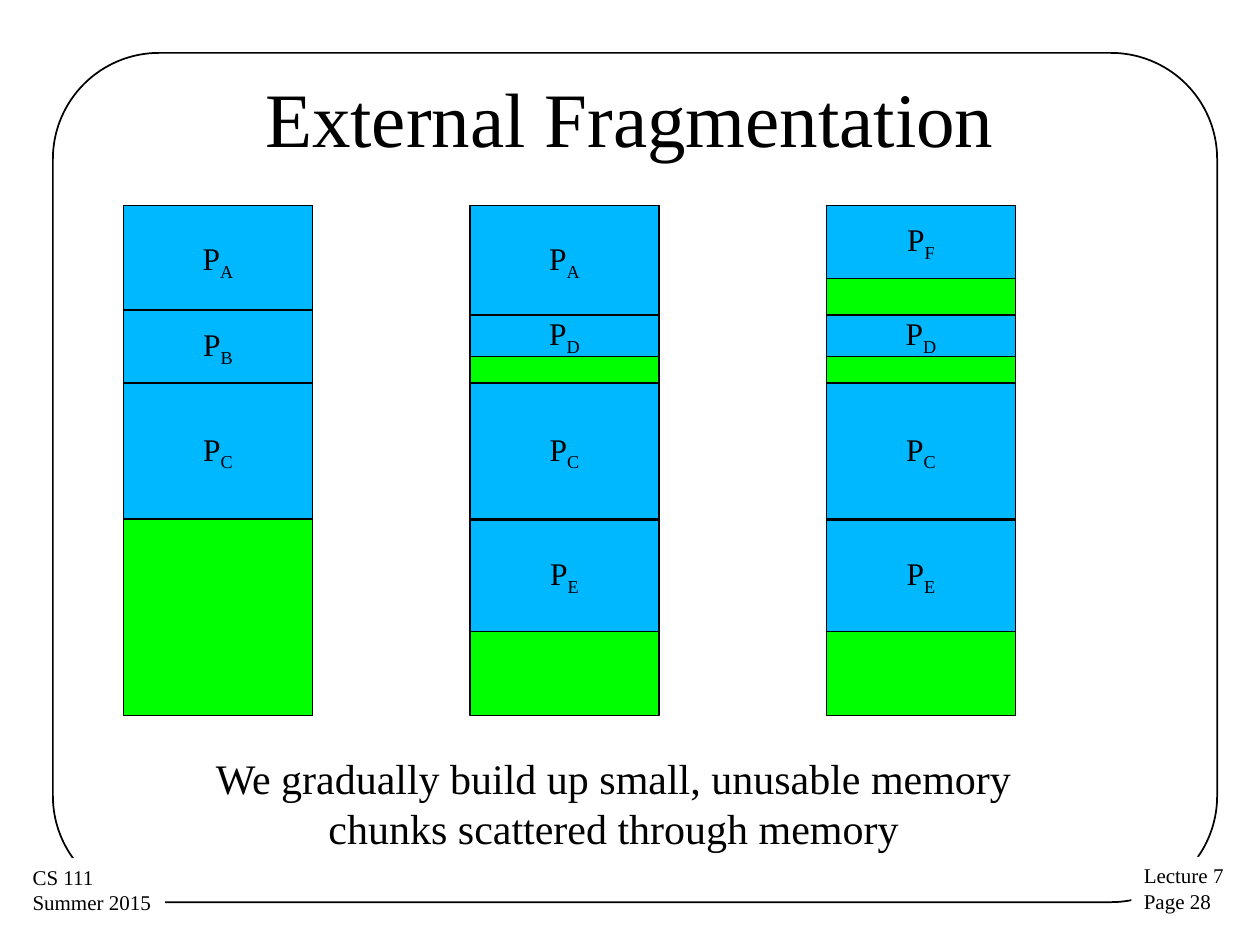
from pptx import Presentation
from pptx.dml.color import RGBColor
from pptx.enum.shapes import MSO_SHAPE
from pptx.enum.text import MSO_ANCHOR, PP_ALIGN
from pptx.util import Inches, Pt

FONT = "Times New Roman"
COLORS = {"ink": "000000", "paper": "FFFFFF", "free": "00FF00", "used": "00B8FF"}

TITLE = "External Fragmentation"
CAPTION = "We gradually build up small, unusable memory chunks scattered through memory"
CORNER_LABELS = [
    (["Lecture 7", "Page 28"], (8.98, 6.8, 0.84, 0.51)),
    (["CS 111", "Summer 2015"], (0.16, 6.81, 1.15, 0.51)),
]

MEMORY_TOP, MEMORY_WIDTH, MEMORY_HEIGHT = 1.63, 1.5, 4.05
# Process: (top, height)
PROCESSES = {
    "A": (1.63, 0.88),
    "B": (2.46, 0.58),
    "C": (3.04, 1.08),
    "D": (2.5, 0.33),
    "E": (4.13, 0.88),
    "F": (1.63, 0.58),
}
# Left edge of each memory snapshot and the processes loaded in it
SNAPSHOTS = [(0.98, "ABC"), (3.73, "ACDE"), (6.56, "CDEF")]


def color(name):
    return RGBColor.from_string(COLORS[name])


def add_box(slide, box, fill=None, line_width=None, kind=MSO_SHAPE.RECTANGLE):
    shape = slide.shapes.add_shape(kind, *map(Inches, box))
    shape.shadow.inherit = False
    if fill:
        shape.fill.solid()
        shape.fill.fore_color.rgb = color(fill)
    else:
        shape.fill.background()
    if line_width:
        shape.line.color.rgb = color("ink")
        shape.line.width = Pt(line_width)
    else:
        shape.line.fill.background()
    return shape


def add_run(paragraph, text, size, subscript=False):
    run = paragraph.add_run()
    run.text = text
    run.font.name = FONT
    run.font.size = Pt(size)
    run.font.color.rgb = color("ink")
    if subscript:
        run._r.get_or_add_rPr().set("baseline", "-25000")


def write_lines(shape, lines, size, align, anchor=MSO_ANCHOR.TOP, wrap=True):
    frame = shape.text_frame
    frame.word_wrap = wrap
    frame.vertical_anchor = anchor
    for index, line in enumerate(lines):
        paragraph = frame.add_paragraph() if index else frame.paragraphs[0]
        paragraph.alignment = align
        add_run(paragraph, line, size)


def add_snapshot(slide, left, names):
    add_box(slide, (left, MEMORY_TOP, MEMORY_WIDTH, MEMORY_HEIGHT), "free", 0.75)
    for name in names:
        top, height = PROCESSES[name]
        block = add_box(slide, (left, top, MEMORY_WIDTH, height), "used", 0.75)
        write_lines(block, ["P"], 18, PP_ALIGN.CENTER, MSO_ANCHOR.MIDDLE, wrap=False)
        add_run(block.text_frame.paragraphs[0], name, 18, subscript=True)


def main():
    presentation = Presentation()
    presentation.slide_width = Inches(10)
    presentation.slide_height = Inches(7.5)
    slide = presentation.slides.add_slide(presentation.slide_layouts[6])

    frame = add_box(slide, (0.42, 0.42, 9.24, 6.74), line_width=1,
                    kind=MSO_SHAPE.ROUNDED_RECTANGLE)
    frame.adjustments[0] = 0.125
    for lines, box in CORNER_LABELS:
        label = add_box(slide, box, "paper")
        write_lines(label, lines, 12, PP_ALIGN.LEFT, wrap=False)

    title = slide.shapes.add_textbox(*map(Inches, (0.5, 0.3, 9, 1.25)))
    write_lines(title, [TITLE], 44, PP_ALIGN.CENTER, MSO_ANCHOR.MIDDLE)

    for left, names in SNAPSHOTS:
        add_snapshot(slide, left, names)

    caption = slide.shapes.add_textbox(*map(Inches, (1.43, 5.92, 6.88, 0.91)))
    write_lines(caption, [CAPTION], 24, PP_ALIGN.CENTER)

    presentation.save("out.pptx")


if __name__ == "__main__":
    main()
